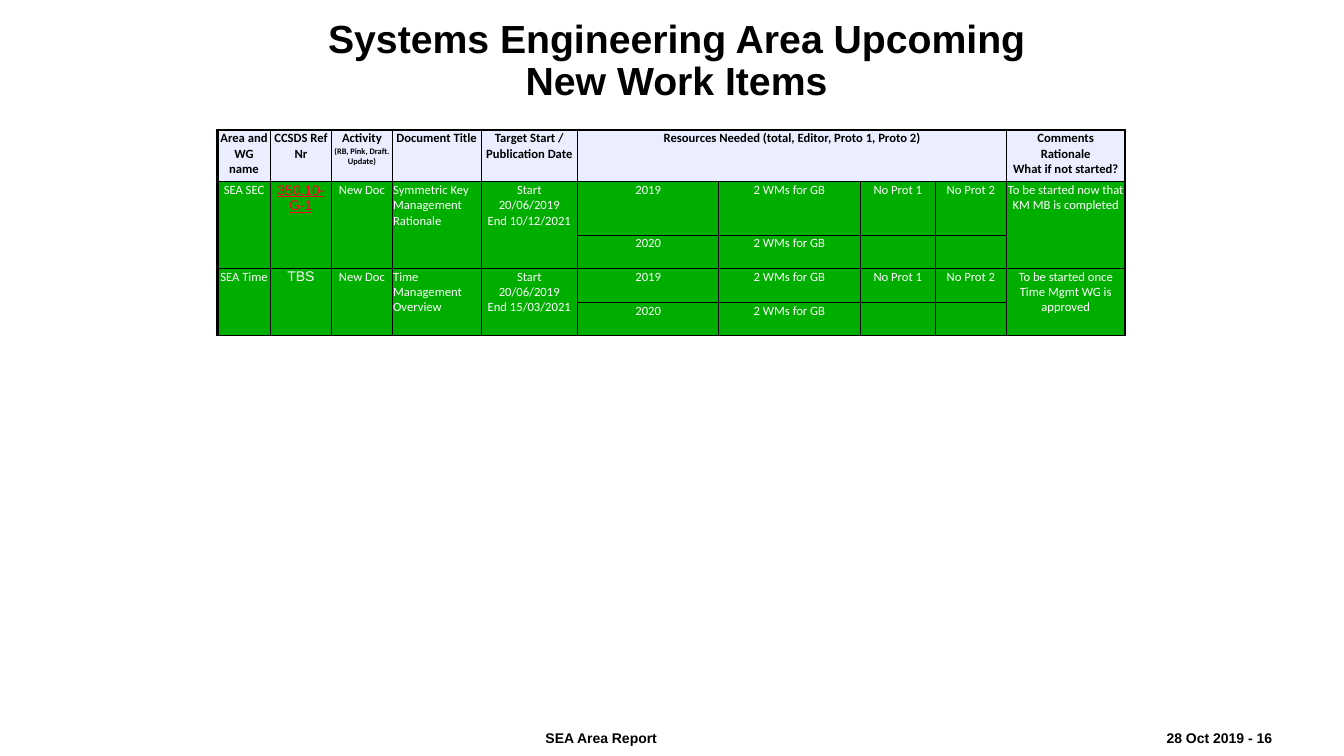
from dataclasses import dataclass

from lxml.etree import SubElement
from pptx import Presentation
from pptx.dml.color import RGBColor
from pptx.enum.text import MSO_ANCHOR, PP_ALIGN as AL
from pptx.oxml.ns import qn
from pptx.util import Emu, Pt

PX = 9144  # EMU in one px (100 px to the inch)
COLORS = {"ink": "000000", "paper": "FFFFFF", "head": "EAEEFF",
          "work": "00AE00", "ref": "FC0128"}


@dataclass
class Style:
    size: float = 9
    font: str = "Calibri"
    color: str = "paper"
    bold: bool = False
    underline: bool = False


@dataclass
class Entry:
    row: int
    col: int
    text: str
    style: Style
    align: AL = AL.CENTER
    rows: int = 1
    cols: int = 1
    note: str = ""


@dataclass
class WorkItem:
    group: str
    ref: str
    ref_style: Style
    title: str
    end: str
    comment: str


@dataclass
class Label:
    text: str
    box: tuple[int, int, int, int]


HEAD = Style(color="ink", bold=True)
BODY = Style()

# Table content
COL_WIDTHS = [52, 61, 60, 88, 96, 140, 140, 75, 70, 118]
ROW_HEIGHTS = [51, 53, 33, 34, 33]
HEADERS = [
    Entry(0, 0, "Area and WG name", HEAD),
    Entry(0, 1, "CCSDS Ref Nr", HEAD),
    Entry(0, 2, "Activity", HEAD, note="(RB, Pink, Draft. Update)"),
    Entry(0, 3, "Document Title", HEAD),
    Entry(0, 4, "Target Start / Publication Date", HEAD),
    Entry(0, 5, "Resources Needed (total, Editor, Proto 1, Proto 2)", HEAD, cols=4),
    Entry(0, 9, "Comments\nRationale\nWhat if not started?", HEAD),
]
WORK_ITEMS = [
    WorkItem("SEA SEC", "350.10-G-1", Style(10, "Arial", "ref", underline=True),
             "Symmetric Key Management Rationale", "10/12/2021",
             "To be started now that KM MB is completed"),
    WorkItem("SEA Time", "TBS", Style(10, "Arial"),
             "Time Management Overview", "15/03/2021",
             "To be started once Time Mgmt WG is approved"),
]
RESOURCES = [["2019", "2 WMs for GB", "No Prot 1", "No Prot 2"],
             ["2020", "2 WMs for GB", "", ""]]

TITLE = Label("Systems Engineering Area Upcoming New Work Items",
              (230, 13, 832, 58))
FOOTERS = [Label("28 Oct 2019 - 16", (1148, 720, 125, 26)),
           Label("SEA Area Report", (532, 720, 131, 26))]


def px(n: int) -> Emu:
    return Emu(n * PX)


def rgb(name: str) -> RGBColor:
    return RGBColor.from_string(COLORS[name])


def set_font(font, style: Style) -> None:
    font.size, font.name = Pt(style.size), style.font
    font.bold, font.underline = style.bold, style.underline
    font.color.rgb = rgb(style.color)


def write_label(sp, text: str, size: float, insets: tuple[int, int], wrap: bool):
    tf = sp.text_frame
    tf.word_wrap, tf.vertical_anchor = wrap, MSO_ANCHOR.TOP
    tf.margin_left = tf.margin_right = px(insets[0])
    tf.margin_top = tf.margin_bottom = px(insets[1])
    p = tf.paragraphs[0]
    p.text = text
    set_font(p.font, Style(size, "Arial", "ink", bold=True))
    return p


def add_title(slide, label: Label) -> None:
    left, top, width, height = label.box
    right, bottom = left + width, top + height
    builder = slide.shapes.build_freeform(left, top, scale=PX)
    builder.add_line_segments([(right, top), (right, bottom), (left, bottom)])
    sp = builder.convert_to_shape()
    sp.shadow.inherit = False
    sp.fill.background()
    sp.line.fill.background()
    p = write_label(sp, label.text, 28, (6, 6), wrap=True)
    p.alignment, p.line_spacing, p.space_before = AL.CENTER, 0.9, Pt(16)
    pPr = p._p.get_or_add_pPr()
    pPr.set("marL", str(px(50)))
    pPr.set("indent", "0")


def set_borders(cell, row: int, col: int) -> None:
    last = len(COL_WIDTHS) - 1
    thick = {"lnL": col == 0, "lnR": col == last, "lnT": row == 0, "lnB": False}
    for side, is_thick in thick.items():
        ln = SubElement(cell._tc.get_or_add_tcPr(), qn(f"a:{side}"),
                        w=str(Pt(2.25 if is_thick else 0.5)))
        SubElement(SubElement(ln, qn("a:solidFill")), qn("a:srgbClr"),
                   val=COLORS["ink"])


def item_entries(row: int, item: WorkItem) -> list[Entry]:
    dates = f"Start\n20/06/2019\nEnd {item.end}"
    entries = [
        Entry(row, 0, item.group, BODY, rows=2),
        Entry(row, 1, item.ref, item.ref_style, rows=2),
        Entry(row, 2, "New Doc", BODY, rows=2),
        Entry(row, 3, item.title, BODY, AL.LEFT, rows=2),
        Entry(row, 4, dates, BODY, rows=2),
        Entry(row, 9, item.comment, BODY, rows=2),
    ]
    for i, year in enumerate(RESOURCES):
        entries += [Entry(row + i, 5 + j, text, BODY)
                    for j, text in enumerate(year) if text]
    return entries


def fill_entry(table, e: Entry) -> None:
    cell = table.cell(e.row, e.col)
    if e.rows * e.cols > 1:
        cell.merge(table.cell(e.row + e.rows - 1, e.col + e.cols - 1))
    p = cell.text_frame.paragraphs[0]
    p.text, p.alignment = e.text, e.align
    set_font(p.font, e.style)
    if e.note:
        p.add_line_break()
        r = p.add_run()
        r.text, r.font.size = e.note, Pt(6)


def add_work_table(slide) -> None:
    table = slide.shapes.add_table(
        len(ROW_HEIGHTS), len(COL_WIDTHS), px(216), px(129),
        px(sum(COL_WIDTHS)), px(sum(ROW_HEIGHTS))).table
    table.first_row = table.horz_banding = False
    for column, width in zip(table.columns, COL_WIDTHS):
        column.width = px(width)
    for i, (row, height) in enumerate(zip(table.rows, ROW_HEIGHTS)):
        row.height = px(height)
        for j, cell in enumerate(row.cells):
            cell.margin_left = cell.margin_right = cell.margin_top = px(1)
            cell.margin_bottom = 0
            set_borders(cell, i, j)
            cell.fill.solid()
            cell.fill.fore_color.rgb = rgb("work" if i else "head")
    entries = list(HEADERS)
    for i, item in enumerate(WORK_ITEMS):
        entries += item_entries(1 + 2 * i, item)
    for e in entries:
        fill_entry(table, e)


def main() -> None:
    prs = Presentation()
    prs.slide_width, prs.slide_height = px(1333), px(750)
    slide = prs.slides.add_slide(prs.slide_layouts[6])
    # Footer
    for label in FOOTERS:
        sp = slide.shapes.add_textbox(*map(px, label.box))
        write_label(sp, label.text, 10, (9, 4), wrap=False)
    # Title and work items
    add_title(slide, TITLE)
    add_work_table(slide)
    prs.save("out.pptx")


if __name__ == "__main__":
    main()
